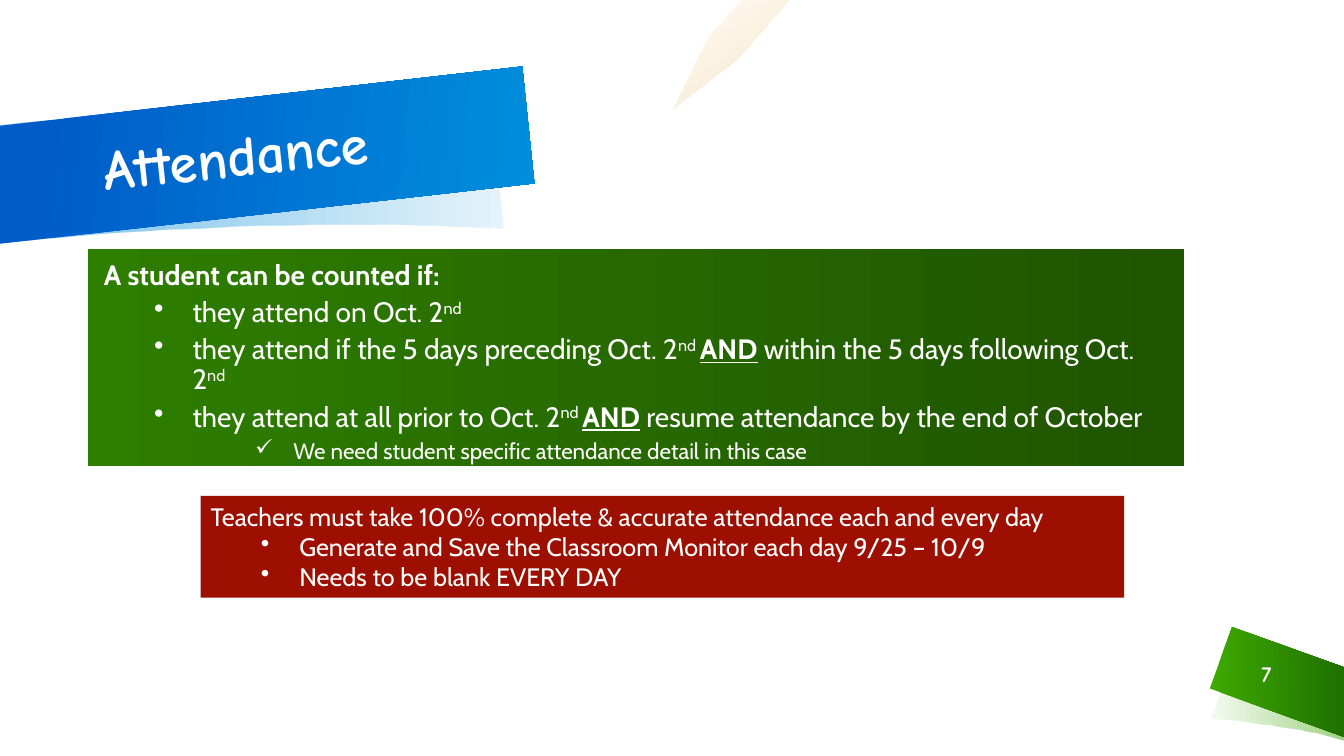
from dataclasses import dataclass

from lxml import etree
from pptx import Presentation
from pptx import util as u
from pptx.dml.color import RGBColor
from pptx.enum import shapes, text
from pptx.oxml.ns import qn

PX = 9144
COLORS = {
    "white": "FFFFFF", "lime": "3DA800", "leaf": "1F7100",
    "sky": "008EDC", "blue": "005CC9", "amber": "FFAA00", "bronze": "C07400",
    "green": "2E7E00", "forest": "1F5400", "red": "9D0F00",
}
HEADING_FONT, BODY_FONT = "Comic Neue", "Cabin"
Point = tuple[int, int]


@dataclass
class Stop:
    percent: int
    color: str
    opacity: int = 100


@dataclass
class Curve:
    first: Point
    second: Point
    end: Point


@dataclass
class Outline:
    start: Point
    segments: list[Point | Curve]
    stops: tuple[Stop, Stop]
    angle: int = 0


@dataclass
class Span:
    words: str
    bold: bool = False
    underline: bool = False
    raised: bool = False


@dataclass
class Line:
    spans: list[Span]
    size: int
    level: int = 0
    indent: int = 0
    bullet: str = ""
    before: int = 0
    spacing: float = 1.0


@dataclass
class Panel:
    place: tuple[int, int, int, int]
    insets: tuple[int, int, int, int]
    lines: list[Line]
    anchor: text.MSO_ANCHOR = text.MSO_ANCHOR.TOP
    fill: str = ""
    stops: tuple[Stop, ...] = ()


def rgb(name: str) -> RGBColor:
    return RGBColor.from_string(COLORS[name])


def apply(target, values: dict) -> None:
    for name, value in values.items():
        setattr(target, name, value)


def place(shape, box: tuple[int, int, int, int]) -> None:
    apply(shape, dict(zip(("left", "top", "width", "height"), (side * PX for side in box))))


def fill_gradient(shape, stops: tuple[Stop, ...], angle: int) -> None:
    shape.fill.gradient()
    shape.fill.gradient_angle = -angle % 360
    for target, stop in zip(shape.fill.gradient_stops, stops):
        target.position = stop.percent / 100
        target.color.rgb = rgb(stop.color)
    for color, stop in zip(shape._element.spPr.iter(qn("a:srgbClr")), stops):
        if stop.opacity < 100:
            etree.SubElement(color, qn("a:alpha"), val=str(stop.opacity * 1000))


def sample(start: Point, curve: Curve, steps: int = 24) -> list[Point]:
    points = []
    for step in range(1, steps + 1):
        t = step / steps
        weights = ((1 - t) ** 3, 3 * t * (1 - t) ** 2, 3 * t ** 2 * (1 - t), t ** 3)
        corners = (start, curve.first, curve.second, curve.end)
        points.append(tuple(sum(w * c[axis] for w, c in zip(weights, corners)) for axis in (0, 1)))
    return points


def draw_outline(page, outline: Outline) -> None:
    points = [outline.start]
    for segment in outline.segments:
        points += sample(points[-1], segment) if isinstance(segment, Curve) else [segment]
    builder = page.shapes.build_freeform(*points[0], scale=PX)
    builder.add_line_segments(points[1:], close=True)
    shape = builder.convert_to_shape()
    shape.shadow.inherit = False
    shape.line.fill.background()
    fill_gradient(shape, outline.stops, outline.angle)


def write_line(para, line: Line) -> None:
    apply(para, {"level": line.level, "alignment": text.PP_ALIGN.LEFT,
                 "line_spacing": line.spacing, "space_before": u.Pt(line.before)})
    if line.bullet:
        props = para._p.get_or_add_pPr()
        props.set("marL", str(line.indent * PX))
        props.set("indent", str(-38 * PX))
        etree.SubElement(props, qn("a:buChar"), char=line.bullet)
    for item in line.spans:
        span = para.add_run()
        span.text = item.words
        apply(span.font, {"name": BODY_FONT, "size": u.Pt(line.size),
                          "bold": item.bold, "underline": item.underline})
        span.font.color.rgb = rgb("white")
        if item.raised:
            span._r.get_or_add_rPr().set("baseline", "30000")


def draw_panel(page, panel: Panel) -> None:
    box = page.shapes.add_shape(shapes.MSO_SHAPE.RECTANGLE, 0, 0, PX, PX)
    place(box, panel.place)
    box.shadow.inherit = False
    box.line.fill.background()
    if panel.stops:
        fill_gradient(box, panel.stops, 0)
    else:
        box.fill.solid()
        box.fill.fore_color.rgb = rgb(panel.fill)
    frame = box.text_frame
    apply(frame, {"word_wrap": True, "vertical_anchor": panel.anchor})
    sides = ("margin_left", "margin_top", "margin_right", "margin_bottom")
    apply(frame, dict(zip(sides, (inset * PX for inset in panel.insets))))
    for index, line in enumerate(panel.lines):
        write_line(frame.paragraphs[0] if index == 0 else frame.add_paragraph(), line)


def write_heading(box, words: str, size: int, align: text.PP_ALIGN) -> None:
    frame = box.text_frame
    apply(frame, {"word_wrap": True, "auto_size": text.MSO_AUTO_SIZE.NONE,
                  "vertical_anchor": text.MSO_ANCHOR.MIDDLE})
    para = frame.paragraphs[0]
    apply(para, {"alignment": align, "line_spacing": 0.9})
    span = para.add_run()
    span.text = words
    apply(span.font, {"name": HEADING_FONT, "size": u.Pt(size), "bold": True})
    span.font.color.rgb = rgb("white")


def rule(*spans: Span) -> Line:
    return Line(list(spans), 20, level=1, indent=88, bullet="•", before=5, spacing=0.9)


def duty(words: str) -> Line:
    return Line([Span(words)], 18, level=1, indent=88, bullet="•")


OUTLINES = [
    Outline((1202, 713), [Curve((1202, 713), (1278, 718), (1333, 735)), (1333, 668),
                          Curve((1272, 651), (1224, 652), (1224, 652))],
            (Stop(3, "lime", 6), Stop(100, "lime", 50))),
    Outline((1333, 662), [(1222, 622), (1200, 683), (1333, 731)],
            (Stop(3, "lime"), Stop(100, "leaf"))),
    Outline((499, 227), [(487, 113), Curve((487, 113), (313, 94), (-2, 125)), (-2, 241),
                         Curve((286, 212), (499, 227), (499, 227))],
            (Stop(0, "sky", 10), Stop(88, "sky", 50)), 180),
    Outline((-1, 242), [(530, 182), (518, 66), (-1, 125)],
            (Stop(9, "blue"), Stop(100, "sky")), 6),
    Outline((735, 0), [(702, 38), (667, 109), (732, 59), (783, 0)],
            (Stop(0, "amber", 5), Stop(100, "bronze", 20)), 53),
]
ND, ND_GAP = Span("nd", raised=True), Span("nd ", raised=True)
AND = Span("AND", bold=True, underline=True)
PANELS = [
    Panel((87, 247, 1087, 215), (16, 12, 12, 12), [
        Line([Span("A student can be counted if:", bold=True)], 20, spacing=0.9),
        rule(Span("they attend on Oct. 2"), ND),
        rule(Span("they attend if the 5 days preceding Oct. 2"), ND_GAP, AND,
             Span(" within the 5 days following Oct. 2"), ND),
        rule(Span("they attend at all prior to Oct. 2"), ND_GAP, AND,
             Span(" resume attendance by the end of October")),
        Line([Span("We need student specific attendance detail in this case")], 16,
             level=3, indent=188, bullet="✓", before=5, spacing=0.9),
    ], stops=(Stop(0, "green"), Stop(100, "forest"))),
    Panel((199, 492, 916, 101), (10, 5, 10, 5), [
        Line([Span("Teachers must take 100% complete & accurate attendance each and every day")], 18),
        duty("Generate and Save the Classroom Monitor each day 9/25 – 10/9"),
        duty("Needs to be blank EVERY DAY"),
    ], fill="red"),
]


def main() -> None:
    deck = Presentation()
    apply(deck, {"slide_width": 1333 * PX, "slide_height": 750 * PX})
    page = deck.slides.add_slide(deck.slide_layouts[5])
    for outline in OUTLINES:
        draw_outline(page, outline)
    number = page.shapes.add_textbox(*(side * PX for side in (1221, 650, 70, 40)))
    write_heading(number, "7", 16, text.PP_ALIGN.CENTER)
    title = page.shapes.title
    page.shapes._spTree.append(title._element)
    place(title, (92, 92, 433, 116))
    title.rotation = 354
    write_heading(title, "Attendance", 40, text.PP_ALIGN.LEFT)
    for panel in PANELS:
        draw_panel(page, panel)
    deck.save("out.pptx")


if __name__ == "__main__":
    main()
